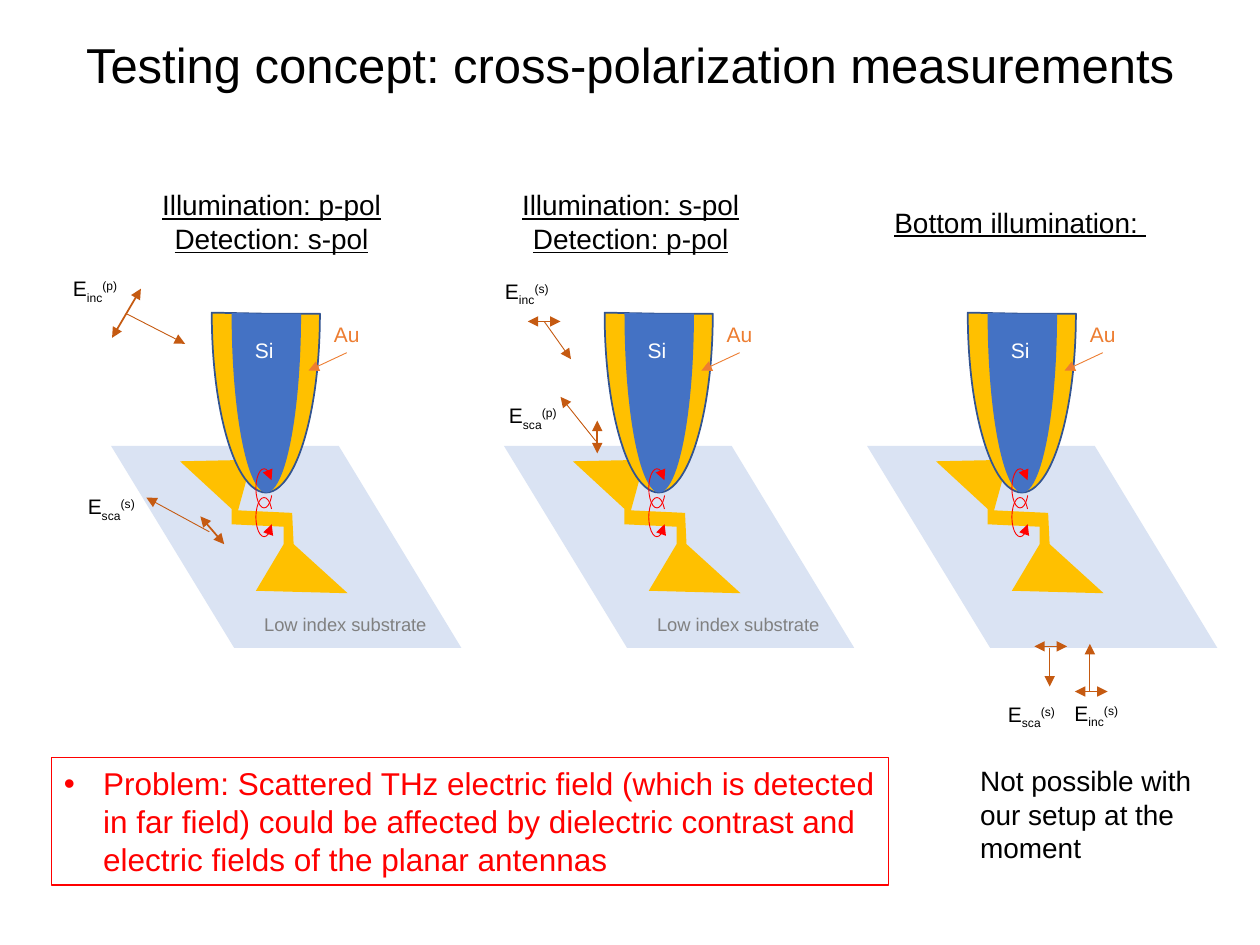
from pptx import Presentation
from pptx import util as u
from pptx.dml.color import RGBColor
from pptx.enum import shapes, text
from pptx.oxml import parse_xml
from pptx.oxml.ns import nsdecls, qn

Cm, Pt = u.Cm, u.Pt
KIND = shapes.MSO_SHAPE
LEFT, MID = text.PP_ALIGN.LEFT, text.PP_ALIGN.CENTER
COLORS = {
    "black": "000000", "white": "FFFFFF", "gray": "808080", "red": "FF0000",
    "base": "DAE3F3", "gold": "FFC000", "blue": "4472C4", "edge": "325491",
    "orange": "ED7D31", "field": "C55A11",
}
rgb = {name: RGBColor.from_string(value) for name, value in COLORS.items()}

deck = Presentation()
deck.slide_width, deck.slide_height = Cm(25.4), Cm(19.05)
slide = deck.slides.add_slide(deck.slide_layouts[6])
parts = slide.shapes


def write(words, x, y, w, h, size, color="black", align=MID, under=None, box=None):
    box = box or parts.add_textbox(Cm(x), Cm(y), Cm(w), Cm(h))
    frame = box.text_frame
    frame.word_wrap = w > 2
    frame.text = words
    for para in frame.paragraphs:
        para.alignment = align
        for run in para.runs:
            run.font.name, run.font.size = "Arial", Pt(size)
            run.font.color.rgb = rgb[color]
            run.font.underline = under
    return frame


def stroke(item, color, width, ends=()):
    item.line.color.rgb = rgb[color]
    item.line.width = Pt(width)
    props = item.element.spPr
    for end in ends:
        props.find(qn("a:ln")).append(
            parse_xml(f'<a:{end} {nsdecls("a")} type="triangle"/>'))
    if props.find(qn("a:effectLst")) is None:
        props.append(parse_xml(f'<a:effectLst {nsdecls("a")}/>'))


title = write("Testing concept: cross-polarization measurements", 0, 0, 25.4, 2.72, 28)
title.vertical_anchor = text.MSO_ANCHOR.MIDDLE
title.paragraphs[0].line_spacing = 0.9

heads = [
    ("Illumination: p-pol\nDetection: s-pol", 0.66, 3.66, 9.63, 1.63),
    ("Illumination: s-pol\nDetection: p-pol", 7.9, 3.66, 9.63, 1.63),
    ("Bottom illumination: ", 16.64, 4.01, 7.85, 0.94),
]
for head in heads:
    write(*head, 16, under=True)

plates = [
    ("base", [(6.83, 8.99), (2.24, 8.99), (4.72, 13.06), (9.3, 13.06)]),
    ("gold", [(5.08, 9.27), (3.63, 9.3), (4.67, 10.26), (4.67, 10.57),
              (5.72, 10.62), (5.72, 10.97), (5.16, 11.91), (7.01, 11.96),
              (5.92, 10.97), (5.89, 10.34), (4.8, 10.29)]),
]
tips = [("gold", 4.27, 2.18), ("blue", 4.67, 1.4)]
loops = [(10.03, "headEnd"), (9.45, "tailEnd")]

for left, label in [(0, True), (7.92, True), (15.24, False)]:
    for color, points in plates:
        spots = [(Cm(left + x), Cm(y)) for x, y in points]
        form = parts.build_freeform(*spots[0])
        form.add_line_segments(spots[1:], close=True)
        plate = form.convert_to_shape()
        plate.shadow.inherit = False
        plate.fill.solid()
        plate.fill.fore_color.rgb = rgb[color]
        plate.line.fill.background()

    for color, x, w in tips:
        tip = parts.add_shape(KIND.PIE, Cm(left + x), Cm(2.72), Cm(w), Cm(7.21))
        tip.adjustments[0], tip.adjustments[1] = 0, 108.68
        tip.shadow.inherit = False
        tip.fill.solid()
        tip.fill.fore_color.rgb = rgb[color]
        if color == "gold":
            stroke(tip, "edge", 1)
        else:
            tip.line.fill.background()

    write("Si", left + 4.83, 6.68, 0.99, 0.76, 12, "white")
    write("Au", left + 6.38, 6.35, 1.22, 0.76, 12, "orange")
    mark = parts.add_connector(shapes.MSO_CONNECTOR.STRAIGHT, Cm(left + 6.99),
                               Cm(7.11), Cm(left + 6.22), Cm(7.47))
    stroke(mark, "orange", 0.5, ["tailEnd"])

    for y, end in loops:
        loop = parts.add_shape(KIND.ARC, Cm(left + 5.16), Cm(y), Cm(0.33), Cm(0.79))
        loop.adjustments[0], loop.adjustments[1] = 25.93, 187.51
        loop.shadow.inherit = False
        loop.fill.background()
        stroke(loop, "red", 0.5, [end])

    if label:
        write("Low index substrate", left + 4.78, 12.24, 4.37, 0.74, 10.5, "gray")

rays = [
    (2.54, 6.32, 3.73, 6.93), (4.22, 10.72, 2.95, 10.03),
    (10.97, 6.48, 11.51, 7.24), (12.01, 8.89, 11.3, 8),
    (21.97, 13.92, 21.97, 12.98), (21.16, 13.06, 21.16, 13.84),
]
poles = [
    (2.26, 6.81, 2.84, 5.82), (4.52, 10.97, 4.04, 10.41),
    (11.3, 6.48, 10.64, 6.48), (12.04, 8.48, 12.04, 9.14),
    (22.33, 13.94, 21.67, 13.94), (21.51, 13.03, 20.85, 13.03),
]
for group, width, ends in [(rays, 0.5, ["tailEnd"]), (poles, 1, ["headEnd", "tailEnd"])]:
    for spot in group:
        ray = parts.add_connector(shapes.MSO_CONNECTOR.STRAIGHT, *map(Cm, spot))
        stroke(ray, "field", width, ends)

fields = [
    ("inc", "(p)", 1.22, 5.44), ("sca", "(s)", 1.52, 9.83),
    ("inc", "(s)", 9.93, 5.49), ("sca", "(p)", 10.01, 8),
    ("inc", "(s)", 21.41, 14), ("sca", "(s)", 20.07, 14.02),
]
for sub, sup, x, y in fields:
    para = write("E", x, y, 1.7, 0.76, 12, align=LEFT).paragraphs[0]
    for words, shift in [(sub, "-25000"), (sup, "30000")]:
        run = para.add_run()
        run.text = words
        run.font.name, run.font.size = "Arial", Pt(12)
        run.font.color.rgb = rgb["black"]
        run.font.element.set("baseline", shift) if hasattr(run.font, "element") \
            else run._r.get_or_add_rPr().set("baseline", shift)

write("Not possible with our setup at the moment", 19.51, 15.27, 5.03, 2.31, 16, align=LEFT)

area = (1.04, 15.27, 16.87, 2.57)
note = parts.add_shape(KIND.RECTANGLE, *map(Cm, area))
note.shadow.inherit = False
note.fill.background()
stroke(note, "red", 0.75)
frame = write("Problem: Scattered THz electric field (which is detected in far field) "
              "could be affected by dielectric contrast and electric fields of the "
              "planar antennas", *area, 18, "red", LEFT, box=note)
props = frame.paragraphs[0]._p.get_or_add_pPr()
props.set("marL", str(Cm(0.79)))
props.set("indent", str(-Cm(0.79)))
props.append(parse_xml(f'<a:buFont {nsdecls("a")} typeface="Arial"/>'))
props.append(parse_xml(f'<a:buChar {nsdecls("a")} char="•"/>'))

deck.save("out.pptx")
